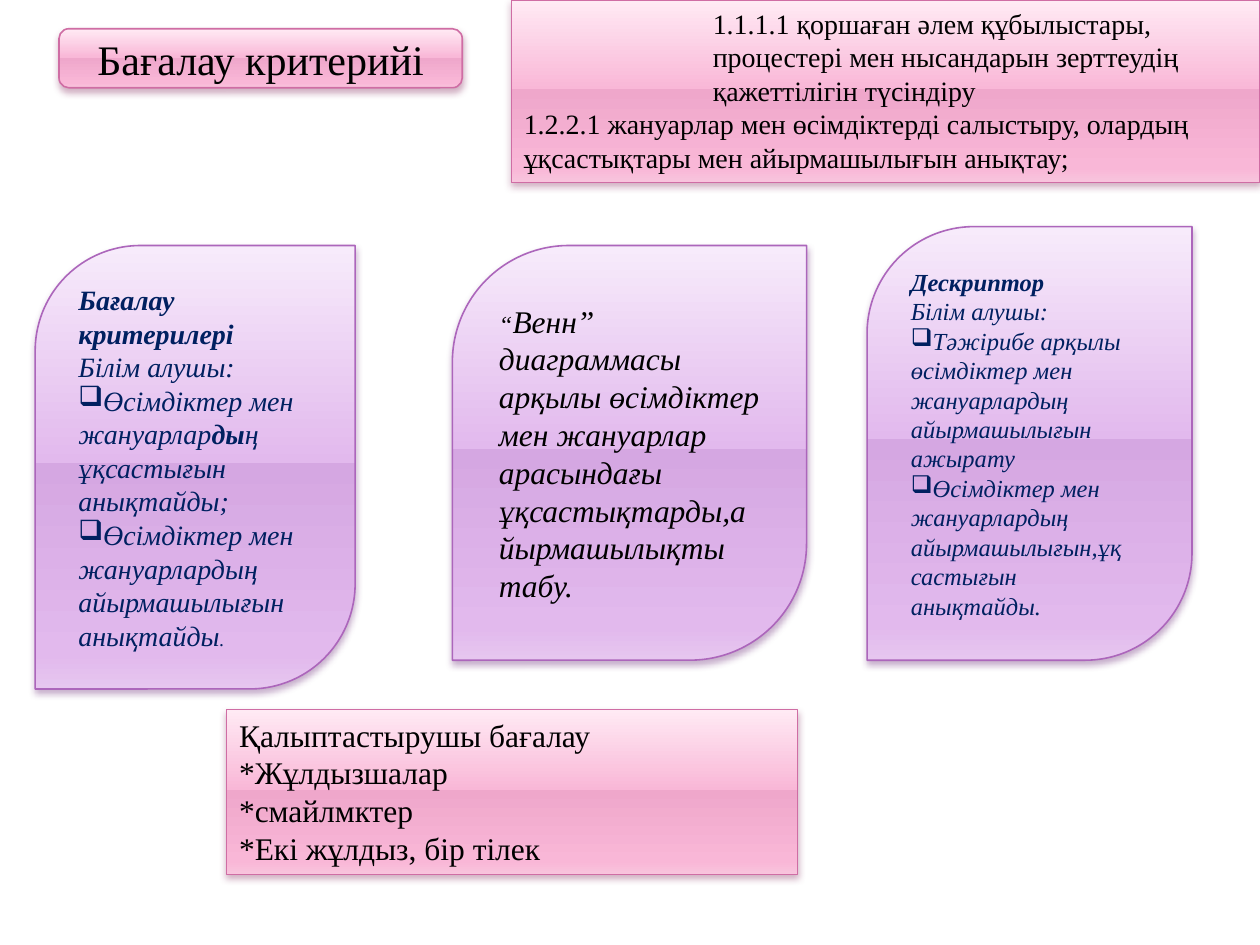
import pptx
import pptx.dml.color
import pptx.enum.shapes
import pptx.enum.text
import pptx.oxml
import pptx.oxml.ns
import pptx.util

Cm, Pt = pptx.util.Cm, pptx.util.Pt
Form = pptx.enum.shapes.MSO_SHAPE
Align = pptx.enum.text.PP_ALIGN
Anchor = pptx.enum.text.MSO_ANCHOR
Fit = pptx.enum.text.MSO_AUTO_SIZE
RGB = pptx.dml.color.RGBColor.from_string
qn = pptx.oxml.ns.qn
SPACE = pptx.oxml.ns.nsdecls("a")

HUES = {
    "black": "000000",
    "navy": "002060",
    "pink": ["FFEAF4", "F9B7D7", "EFA7CB", "F9B7D7", "F8C4DD"],
    "pink line": "CF6DA4",
    "pink shade": "893263",
    "lilac": ["F7EBFB", "E2B9ED", "D5A7E2", "E2B9ED", "E6C6EF"],
    "lilac line": "AC66BB",
    "lilac shade": "6E307B",
}
STOPS = [0, 49, 49, 92, 100]


class Deck:
    """Style and current slide, with a method for each kind of element."""

    def __init__(self):
        self.file = pptx.Presentation()
        self.file.slide_width, self.file.slide_height = Cm(25.4), Cm(19.05)
        self.slide = self.file.slides.add_slide(self.file.slide_layouts[6])
        self.font = "Times New Roman"

    def shape(self, form, box, hue):
        item = self.slide.shapes.add_shape(form, *map(Cm, box))
        item.line.color.rgb = RGB(HUES[hue + " line"])
        item.line.width = Pt(0.9)
        item.fill.gradient()
        item.fill.gradient_angle = 270
        props = item.element.spPr
        stops = props.find(".//" + qn("a:gsLst"))
        stops.clear()
        for stop, tone in zip(STOPS, HUES[hue]):
            stops.append(pptx.oxml.parse_xml(
                f'<a:gs {SPACE} pos="{stop * 1000}"><a:srgbClr val="{tone}"/></a:gs>'))
        item.shadow.inherit = False
        props.find(qn("a:effectLst")).append(pptx.oxml.parse_xml(
            f'<a:outerShdw {SPACE} blurRad="{Pt(4)}" dist="{Pt(2)}" dir="5400000" rotWithShape="0">'
            f'<a:srgbClr val="{HUES[hue + " shade"]}"><a:alpha val="38000"/></a:srgbClr></a:outerShdw>'))
        return item

    def text(self, item, lines, size, color="black", align=Align.LEFT):
        frame = item.text_frame
        frame.word_wrap = True
        for i, line in enumerate(lines):
            para = frame.add_paragraph() if i else frame.paragraphs[0]
            para.alignment = align
            runs = [(line, "")] if isinstance(line, str) else line
            if runs[0] == "❑":
                self.bullet(para, runs[0])
                runs = runs[1:]
            for words, style, *other in runs:
                run = para.add_run()
                run.text = words
                font = run.font
                font.name = self.font
                font.size = Pt(other[0] if other else size)
                font.bold, font.italic = "b" in style, "i" in style
                font.color.rgb = RGB(HUES[color])

    def bullet(self, para, sign):
        props = para._p.get_or_add_pPr()
        props.set("marL", "0")
        props.set("indent", "0")
        props.append(pptx.oxml.parse_xml(f'<a:buChar {SPACE} char="{sign}"/>'))

    def leaf(self, box, lines, size, color="black"):
        item = self.shape(Form.ROUND_2_DIAG_RECTANGLE, box, "lilac")
        item.adjustments[0], item.adjustments[1] = 0.329, 0
        item.text_frame.vertical_anchor = Anchor.MIDDLE
        self.text(item, lines, size, color)

    def panel(self, box, lines, size):
        item = self.shape(Form.RECTANGLE, box, "pink")
        item.text_frame.vertical_anchor = Anchor.TOP
        item.text_frame.auto_size = Fit.SHAPE_TO_FIT_TEXT
        self.text(item, lines, size)
        return item

    def title(self, box, words, size):
        item = self.shape(Form.ROUNDED_RECTANGLE, box, "pink")
        item.text_frame.vertical_anchor = Anchor.MIDDLE
        self.text(item, [words], size, align=Align.CENTER)


def main():
    deck = Deck()
    deck.title((1.19, 0.58, 8.13, 1.19), "Бағалау критерийі", 24)
    deck.leaf((0.71, 4.95, 6.45, 8.94), [
        [("Бағалау критерилері", "bi")],
        [("Білім алушы:", "i")],
        ["❑", ("Өсімдіктер мен жануарлар", "i"), ("ды", "bi"),
         ("ң ұқсастығын анықтайды;", "i")],
        ["❑", ("Өсімдіктер мен жануарлардың айырмашылығын анықтайды", "i"),
         (".", "i", 11)],
    ], 16, "navy")
    goals = deck.panel((10.31, 0, 15.09, 3.68), [
        "1.1.1.1 қоршаған әлем құбылыстары, процестері мен нысандарын "
        "зерттеудің қажеттілігін түсіндіру",
        "1.2.2.1 жануарлар мен өсімдіктерді салыстыру, олардың "
        "ұқсастықтары мен айырмашылығын анықтау;",
    ], 16)
    first = goals.text_frame.paragraphs[0]
    first.level = 3
    first._p.get_or_add_pPr().set("marL", str(Cm(3.81)))
    deck.leaf((9.12, 4.95, 7.14, 8.36), [
        [("“", "i", 14),
         ("Венн” диаграммасы арқылы өсімдіктер мен жануарлар арасындағы "
          "ұқсастықтарды,айырмашылықты табу.", "i")],
    ], 18)
    deck.leaf((17.48, 4.57, 6.55, 8.74), [
        [("Дескриптор", "bi")],
        [("Білім алушы:", "i")],
        ["❑", ("Тәжірибе арқылы өсімдіктер мен жануарлардың "
               "айырмашылығын ажырату", "i")],
        ["❑", ("Өсімдіктер мен жануарлардың айырмашылығын,ұқ", "i")],
        [("састығын анықтайды.", "i")],
    ], 14, "navy")
    deck.panel((4.57, 14.3, 11.51, 3.33), [
        "Қалыптастырушы бағалау",
        "*Жұлдызшалар",
        "*смайлмктер",
        "*Екі жұлдыз, бір тілек",
    ], 18)
    deck.file.save("out.pptx")


if __name__ == "__main__":
    main()
